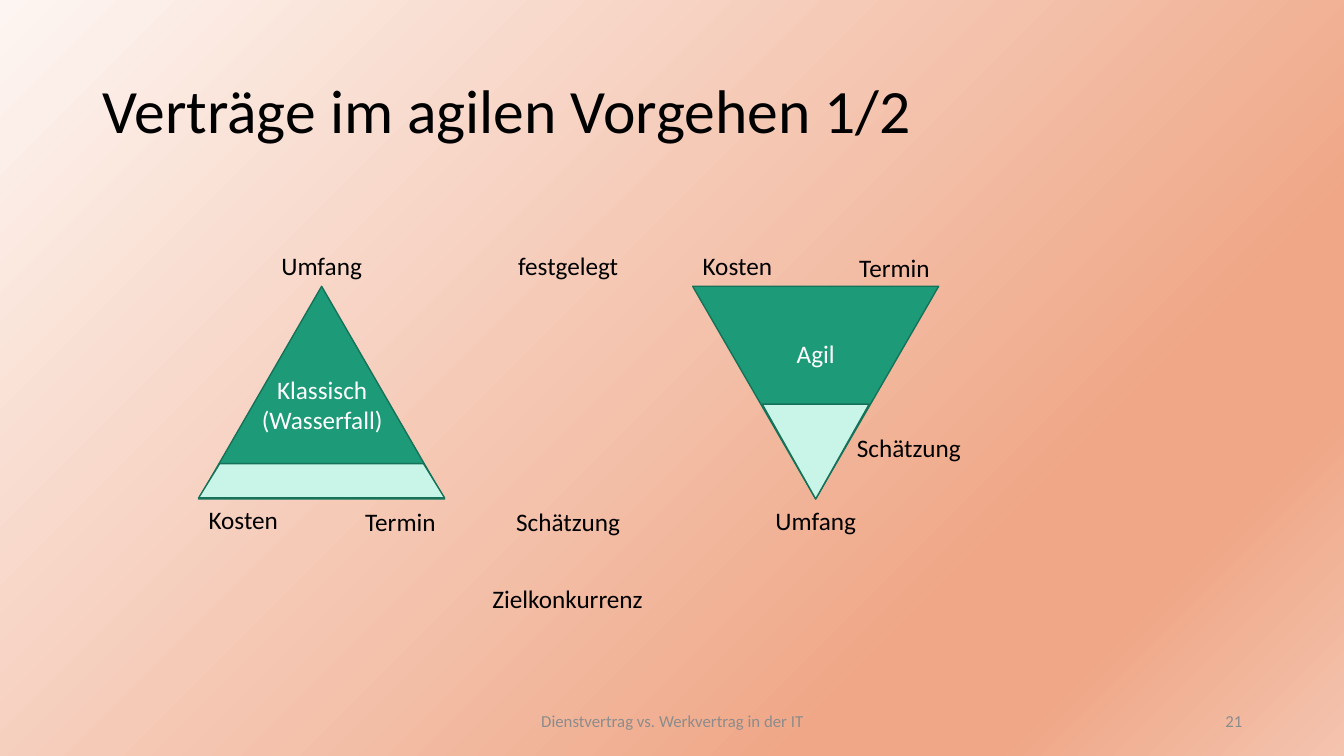
from dataclasses import dataclass

import lxml.etree
import pptx
import pptx.dml.color
import pptx.enum.shapes
import pptx.enum.text
import pptx.oxml.ns
import pptx.slide
import pptx.util

Inches = pptx.util.Inches
Align = pptx.enum.text.PP_ALIGN
Anchor = pptx.enum.text.MSO_ANCHOR
Preset = pptx.enum.shapes.MSO_SHAPE

COLORS = {
    "text": "000000",
    "inverse": "FFFFFF",
    "footer": "8C8C8C",
    "fixed": "1D9A78",
    "estimated": "C8F5E8",
    "outline": "157259",
}
BACKGROUND_STOPS = [(0, "FDF5F2"), (74, "EFA787"), (83, "EFA787"), (100, "F4C4AF")]
FONT = "Calibri"

CLASSIC_LEFT, AGILE_LEFT = 1.97, 6.87
TRIANGLE_TOP, TRIANGLE_WIDTH, TRIANGLE_HEIGHT = 2.84, 2.44, 2.11
ABOVE, BELOW = 2.43, 4.96
LINE_HEIGHT = 0.4


@dataclass(frozen=True)
class Label:
    text: str
    left: float
    top: float
    width: float
    height: float = LINE_HEIGHT
    align: Align = Align.LEFT
    size: int = 18
    color: str = "text"
    anchor: Anchor = Anchor.TOP
    wrap: bool = True
    line_spacing: float = 1.0


@dataclass(frozen=True)
class Area:
    preset: Preset
    left: float
    top: float
    width: float
    height: float
    fill: str
    rotation: int = 0
    adjustment: float | None = None


AREAS = [
    Area(Preset.ISOSCELES_TRIANGLE, CLASSIC_LEFT, TRIANGLE_TOP,
         TRIANGLE_WIDTH, TRIANGLE_HEIGHT, "fixed"),
    Area(Preset.ISOSCELES_TRIANGLE, AGILE_LEFT, TRIANGLE_TOP,
         TRIANGLE_WIDTH, TRIANGLE_HEIGHT, "fixed", rotation=180),
    Area(Preset.TRAPEZOID, CLASSIC_LEFT, 4.6, TRIANGLE_WIDTH, 0.34,
         "estimated", adjustment=0.615),
    Area(Preset.ISOSCELES_TRIANGLE, 7.56, 4.01, 1.06, 0.94, "estimated", rotation=180),
]

LABELS = [
    Label("Verträge im agilen Vorgehen 1/2", 0.92, 0.4, 11.5, 1.45, size=44,
          anchor=Anchor.MIDDLE, line_spacing=0.9),
    Label("Umfang", CLASSIC_LEFT, ABOVE, TRIANGLE_WIDTH, align=Align.CENTER),
    Label("Kosten", CLASSIC_LEFT, 4.95, 1.55),
    Label("Termin", 2.91, 4.97, 1.51, align=Align.RIGHT),
    Label("Klassisch\n(Wasserfall)", 2.49, 3.66, 1.41, 0.71, Align.CENTER,
          color="inverse", wrap=False),
    Label("festgelegt", 4.83, ABOVE, 1.61, align=Align.CENTER),
    Label("Schätzung", 4.96, 4.97, 1.35, align=Align.CENTER),
    Label("Zielkonkurrenz", 4.11, 5.74, 3.04, align=Align.CENTER),
    Label("Kosten", AGILE_LEFT, ABOVE, 1.69),
    Label("Termin", 7.61, 2.45, 1.71, align=Align.RIGHT),
    Label("Agil", 7.8, 3.31, 0.58, align=Align.CENTER, color="inverse", wrap=False),
    Label("Schätzung", 8.4, 4.24, 1.35),
    Label("Umfang", AGILE_LEFT, BELOW, TRIANGLE_WIDTH, align=Align.CENTER),
    Label("Dienstvertrag vs. Werkvertrag in der IT", 4.42, 6.95, 4.5,
          align=Align.CENTER, size=12, color="footer", anchor=Anchor.MIDDLE),
    Label("21", 9.42, 6.95, 3, align=Align.RIGHT, size=12, color="footer",
          anchor=Anchor.MIDDLE),
]


def rgb(name: str) -> pptx.dml.color.RGBColor:
    return pptx.dml.color.RGBColor.from_string(COLORS[name])


def paint_background(slide: pptx.slide.Slide) -> None:
    """Fill the background with the diagonal four-stop gradient."""
    qn = pptx.oxml.ns.qn
    slide.background.fill.gradient()
    gradient = next(slide.element.iter(qn("a:gradFill")))
    stops = gradient.find(qn("a:gsLst"))
    for stop in list(stops):
        stops.remove(stop)
    for percent, color in BACKGROUND_STOPS:
        stop = lxml.etree.SubElement(stops, qn("a:gs"), pos=str(percent * 1000))
        lxml.etree.SubElement(stop, qn("a:srgbClr"), val=color)
    direction = gradient.find(qn("a:lin"))
    direction.set("ang", str(45 * 60000))
    direction.set("scaled", "0")


def add_area(slide: pptx.slide.Slide, area: Area) -> None:
    shape = slide.shapes.add_shape(
        area.preset, Inches(area.left), Inches(area.top),
        Inches(area.width), Inches(area.height))
    shape.shadow.inherit = False
    shape.rotation = area.rotation
    if area.adjustment is not None:
        shape.adjustments[0] = area.adjustment
    shape.fill.solid()
    shape.fill.fore_color.rgb = rgb(area.fill)
    shape.line.color.rgb = rgb("outline")
    shape.line.width = pptx.util.Pt(1)


def add_label(slide: pptx.slide.Slide, label: Label) -> None:
    box = slide.shapes.add_textbox(
        Inches(label.left), Inches(label.top), Inches(label.width), Inches(label.height))
    frame = box.text_frame
    frame.word_wrap = label.wrap
    frame.vertical_anchor = label.anchor
    paragraph = frame.paragraphs[0]
    paragraph.alignment = label.align
    paragraph.line_spacing = label.line_spacing
    for index, line in enumerate(label.text.split("\n")):
        if index:
            paragraph.add_line_break()
        run = paragraph.add_run()
        run.text = line
        run.font.name = FONT
        run.font.size = pptx.util.Pt(label.size)
        run.font.color.rgb = rgb(label.color)


def main() -> None:
    presentation = pptx.Presentation()
    presentation.slide_width = Inches(13.33)
    presentation.slide_height = Inches(7.5)
    slide = presentation.slides.add_slide(presentation.slide_layouts[6])
    paint_background(slide)
    for area in AREAS:
        add_area(slide, area)
    for label in LABELS:
        add_label(slide, label)
    presentation.save("out.pptx")


if __name__ == "__main__":
    main()
